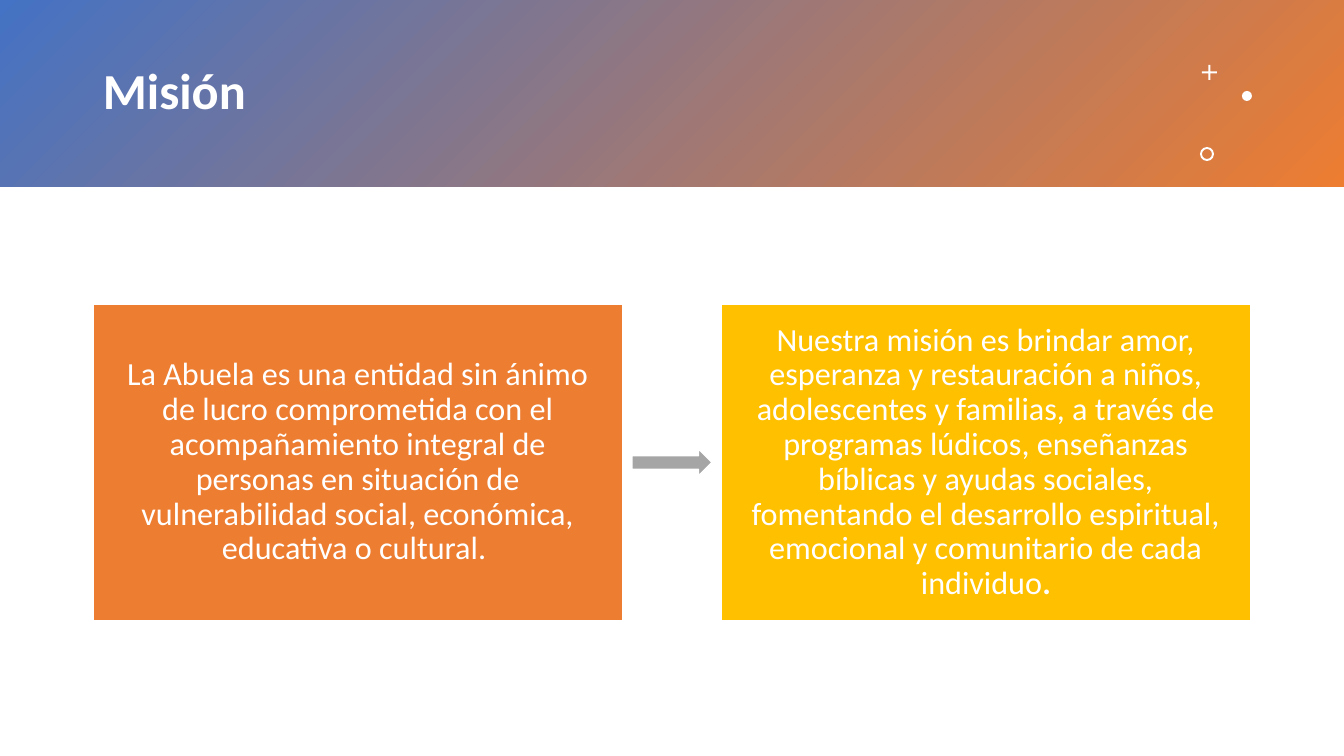
import pptx
import pptx.util
from pptx.dml.color import RGBColor
from pptx.enum.shapes import MSO_SHAPE
from pptx.enum.text import MSO_ANCHOR, PP_ALIGN

TITLE = "Misión"
# Each card: fill colour name, then runs of (text, bold)
CARDS = [
    ("orange", [("La Abuela es una entidad sin ánimo de lucro comprometida con el "
                 "acompañamiento integral de personas en situación de vulnerabilidad "
                 "social, económica, educativa o cultural. ", False)]),
    ("gold", [("Nuestra misión es brindar amor, esperanza y restauración a niños, "
               "adolescentes y familias, a través de programas lúdicos, enseñanzas "
               "bíblicas y ayudas sociales, fomentando el desarrollo espiritual, "
               "emocional y comunitario de cada individuo", False), (".", True)]),
]
# Header ornaments: preset, box in px, adjustment
ORNAMENTS = [
    (MSO_SHAPE.CROSS, (1202, 65, 15, 15), 0.43),
    (MSO_SHAPE.OVAL, (1242, 91, 10, 10), None),
    (MSO_SHAPE.DONUT, (1200, 147, 14, 14), 0.14),
]
THEME = {
    "font": "Calibri", "title": 36, "body": 23, "outline": 1, "spacing": 0.9,
    "white": "FFFFFF", "blue": "4472C4", "orange": "ED7D31",
    "gold": "FFC000", "gray": "A5A5A5",
}
SLIDE_W, SLIDE_H, HEADER_H = 1344, 756, 187
MARGIN, CARD_TOP, CARD_W, CARD_H, INSET = 93, 304, 530, 317, 17
CARD_GAP = SLIDE_W - 2 * (MARGIN + CARD_W)
ARROW_W, ARROW_H = 80, 27


def px(n):
    return pptx.util.Emu(round(n * 12192000 / SLIDE_W))


def color(name):
    return RGBColor.from_string(THEME[name])


def add_shape(s, preset, box, fill, outlined=False):
    sp = s.shapes.add_shape(preset, *map(px, box))
    sp.shadow.inherit = False
    sp.fill.solid()
    sp.fill.fore_color.rgb = color(fill)
    if outlined:
        sp.line.color.rgb = color("white")
        sp.line.width = pptx.util.Pt(THEME["outline"])
    else:
        sp.line.fill.background()
    return sp


def write(tf, runs, size, align):
    tf.word_wrap = True
    tf.vertical_anchor = MSO_ANCHOR.MIDDLE
    p = tf.paragraphs[0]
    p.alignment = align
    p.line_spacing = THEME["spacing"]
    p.font.name = THEME["font"]
    p.font.size = pptx.util.Pt(THEME[size])
    p.font.color.rgb = color("white")
    for text, bold in runs:
        r = p.add_run()
        r.text = text
        r.font.bold = bold


def add_header(s):
    band = add_shape(s, MSO_SHAPE.RECTANGLE, (0, 0, SLIDE_W, HEADER_H), "blue")
    band.fill.gradient()
    band.fill.gradient_angle = 315
    for stop, position, name in zip(band.fill.gradient_stops, (0, 1), ("blue", "orange")):
        stop.position = position
        stop.color.rgb = color(name)
    title = s.shapes.add_textbox(*map(px, (MARGIN, 33, 1084, 120)))
    write(title.text_frame, [(TITLE, True)], "title", PP_ALIGN.LEFT)
    for preset, box, adjustment in ORNAMENTS:
        sp = add_shape(s, preset, box, "white")
        if adjustment is not None:
            sp.adjustments[0] = adjustment


def add_cards(s):
    for i, (fill, runs) in enumerate(CARDS):
        left = MARGIN + i * (CARD_W + CARD_GAP)
        card = add_shape(s, MSO_SHAPE.RECTANGLE, (left, CARD_TOP, CARD_W, CARD_H), fill, True)
        tf = card.text_frame
        tf.margin_left = tf.margin_right = tf.margin_top = tf.margin_bottom = px(INSET)
        write(tf, runs, "body", PP_ALIGN.CENTER)
    arrow_box = ((SLIDE_W - ARROW_W) / 2, CARD_TOP + (CARD_H - ARROW_H) / 2, ARROW_W, ARROW_H)
    add_shape(s, MSO_SHAPE.RIGHT_ARROW, arrow_box, "gray", True)


def main():
    prs = pptx.Presentation()
    prs.slide_width, prs.slide_height = px(SLIDE_W), px(SLIDE_H)
    s = prs.slides.add_slide(prs.slide_layouts[6])
    add_header(s)
    add_cards(s)
    prs.save("out.pptx")


if __name__ == "__main__":
    main()
